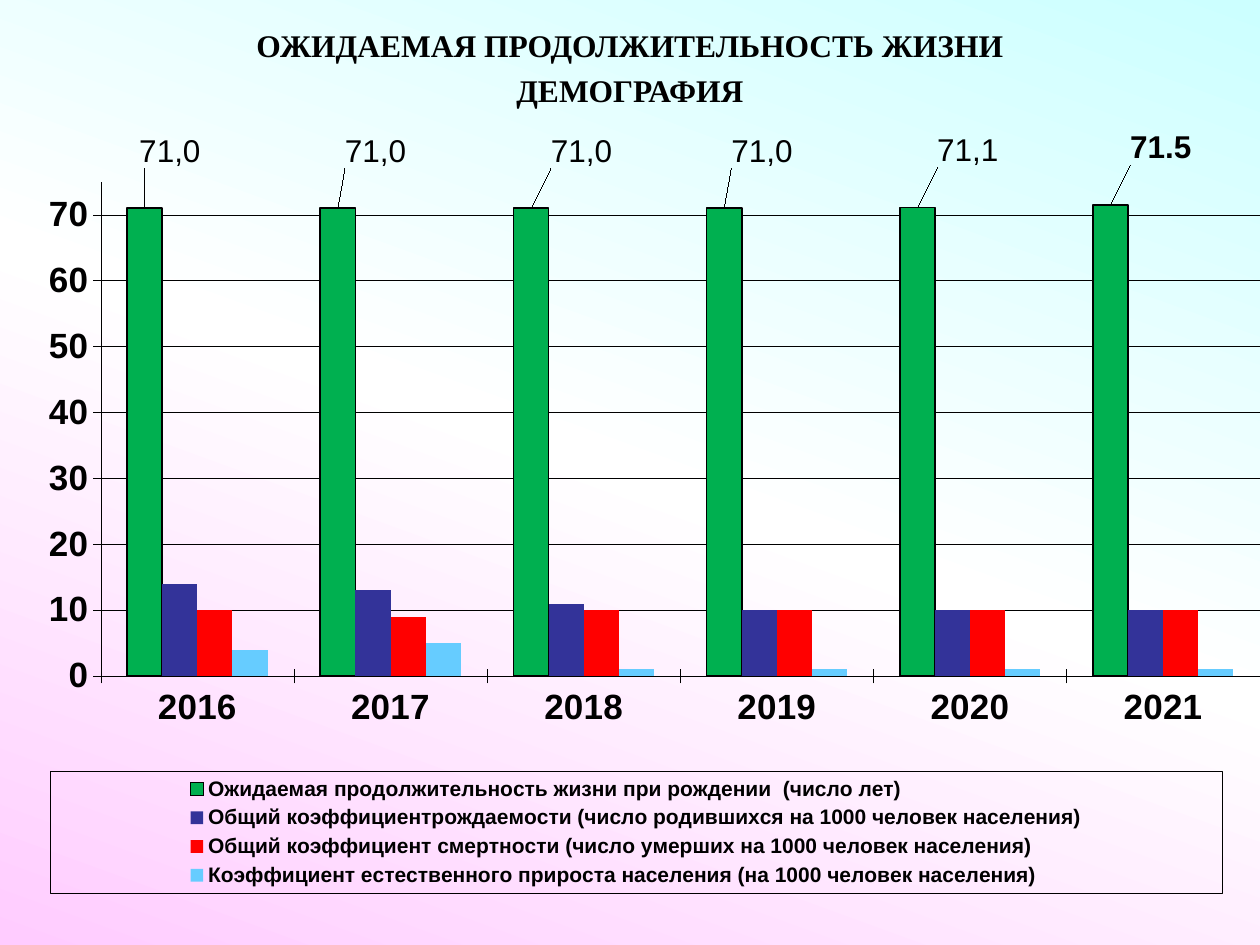
import pptx
import pptx.chart.data
import pptx.dml.color
import pptx.enum.chart
import pptx.enum.text
import pptx.oxml
import pptx.oxml.ns
import pptx.util
from pptx.util import Cm, Pt

TITLE = ["ОЖИДАЕМАЯ ПРОДОЛЖИТЕЛЬНОСТЬ ЖИЗНИ", "ДЕМОГРАФИЯ"]
YEARS = ["2016", "2017", "2018", "2019", "2020", "2021"]
SERIES = [
    ("Ожидаемая продолжительность жизни при рождении  (число лет)",
     [71, 71, 71, 71, 71.1, 71.5], "00B050"),
    ("Общий коэффициентрождаемости (число родившихся на 1000 человек населения)",
     [14, 13, 11, 10, 10, 10], "333399"),
    ("Общий коэффициент смертности (число умерших на 1000 человек населения)",
     [10, 9, 10, 10, 10, 10], "FF0000"),
    ("Коэффициент естественного прироста населения (на 1000 человек населения)",
     [4, 5, 1, 1, 1, 1], "66CCFF"),
]
LABELS = [("71,0", 0.02), ("71,0", 0.03), ("71,0", 0.04),
          ("71,0", 0.03), ("71,1", 0.04), (None, 0.04)]
LABEL_RISE = -0.04
BACKGROUND = [(0, "CCFFFF"), (50, "FFFFFF"), (100, "FFCCFF")]
BACKGROUND_ANGLE = 110
PLOT = (0.08, 0.12, 0.92, 0.57)
LEGEND = (0.04, 0.8, 0.93, 0.14)
BLACK = "000000"


def color(value):
    return pptx.dml.color.RGBColor.from_string(value)


def set_font(font, size, bold=True, name="Arial"):
    font.name, font.size, font.bold = name, Pt(size), bold
    font.color.rgb = color(BLACK)


def set_line(line, width):
    line.color.rgb = color(BLACK)
    line.width = Pt(width)


def layout(x, y, w=None, h=None, inner=False):
    edge = w is not None
    parts = '<c:layoutTarget val="inner"/>' if inner else ""
    if edge:
        parts += '<c:xMode val="edge"/><c:yMode val="edge"/>'
    parts += f'<c:x val="{x}"/><c:y val="{y}"/>'
    if edge:
        parts += f'<c:w val="{w}"/><c:h val="{h}"/>'
    return pptx.oxml.parse_xml(
        f'<c:layout {pptx.oxml.ns.nsdecls("c")}>'
        f'<c:manualLayout>{parts}</c:manualLayout></c:layout>')


def place(parent, new_layout, after=None):
    for old in parent.findall(pptx.oxml.ns.qn("c:layout")):
        parent.remove(old)
    if after is None:
        parent.insert(0, new_layout)
    else:
        parent.find(pptx.oxml.ns.qn(after)).addnext(new_layout)


def paint_background(page):
    stops = "".join(f'<a:gs pos="{pos * 1000}"><a:srgbClr val="{value}"/></a:gs>'
                    for pos, value in BACKGROUND)
    page.element.cSld.insert(0, pptx.oxml.parse_xml(
        f'<p:bg {pptx.oxml.ns.nsdecls("p", "a")}><p:bgPr><a:gradFill rotWithShape="0">'
        f'<a:gsLst>{stops}</a:gsLst><a:lin ang="{BACKGROUND_ANGLE * 60000}" scaled="1"/>'
        '</a:gradFill><a:effectLst/></p:bgPr></p:bg>'))


def add_labels(series):
    for index, (text, shift) in enumerate(LABELS):
        label = series.points[index].data_label
        if text:
            span = label.text_frame.paragraphs[0].add_run()
            span.text = text
            set_font(span.font, 18, bold=False)
        else:
            set_font(label.font, 18)
        label.position = pptx.enum.chart.XL_LABEL_POSITION.OUTSIDE_END
    rows = series.data_labels._element.findall(pptx.oxml.ns.qn("c:dLbl"))
    for row, (text, shift) in zip(rows, LABELS):
        place(row, layout(shift, LABEL_RISE), "c:idx")


def add_chart(page):
    data = pptx.chart.data.CategoryChartData()
    data.categories = YEARS
    for name, values, fill in SERIES:
        data.add_series(name, values)
    chart = page.shapes.add_chart(
        pptx.enum.chart.XL_CHART_TYPE.COLUMN_CLUSTERED,
        Cm(0), Cm(1.57), Cm(25.4), Cm(17.48), data).chart
    chart.has_title = False
    set_font(chart.font, 20)
    plot = chart.plots[0]
    plot.gap_width, plot.overlap, plot.vary_by_categories = 150, 0, False

    for series, (name, values, fill) in zip(plot.series, SERIES):
        series.format.fill.solid()
        series.format.fill.fore_color.rgb = color(fill)
        series.format.line.fill.background()
    set_line(plot.series[0].format.line, 1)
    add_labels(plot.series[0])

    for axis in (chart.category_axis, chart.value_axis):
        axis.major_tick_mark = pptx.enum.chart.XL_TICK_MARK.CROSS
        set_font(axis.tick_labels.font, 20)
        set_line(axis.format.line, 0.25)
    chart.category_axis.tick_label_position = pptx.enum.chart.XL_TICK_LABEL_POSITION.LOW
    scale = chart.value_axis
    scale.minimum_scale, scale.maximum_scale, scale.major_unit = 0, 75, 10
    scale.has_major_gridlines = True
    set_line(scale.major_gridlines.format.line, 0.25)

    chart.has_legend = True
    legend = chart.legend
    legend.position = pptx.enum.chart.XL_LEGEND_POSITION.RIGHT
    legend.include_in_layout = False
    set_font(legend.font, 12)
    place(legend._element, layout(*LEGEND), "c:legendPos")
    legend._element.find(pptx.oxml.ns.qn("c:txPr")).addprevious(pptx.oxml.parse_xml(
        f'<c:spPr {pptx.oxml.ns.nsdecls("c", "a")}><a:noFill/><a:ln w="3175"><a:solidFill>'
        f'<a:srgbClr val="{BLACK}"/></a:solidFill></a:ln></c:spPr>'))
    place(chart._chartSpace.chart.plotArea, layout(*PLOT, inner=True))


def add_title(page):
    box = page.shapes.add_textbox(Cm(0), Cm(0.41), Cm(25.4), Cm(1.4))
    frame = box.text_frame
    frame.word_wrap = True
    for index, line in enumerate(TITLE):
        para = frame.add_paragraph() if index else frame.paragraphs[0]
        para.alignment = pptx.enum.text.PP_ALIGN.CENTER
        para.space_before = Pt(3.6)
        props = para._p.get_or_add_pPr()
        props.set("marL", str(Cm(0.95)))
        props.set("indent", str(-Cm(0.95)))
        span = para.add_run()
        span.text = line
        set_font(span.font, 18, name="Times New Roman")


def main():
    deck = pptx.Presentation()
    deck.slide_width, deck.slide_height = Cm(25.4), Cm(19.05)
    page = deck.slides.add_slide(deck.slide_layouts[6])
    paint_background(page)
    add_chart(page)
    add_title(page)
    deck.save("out.pptx")


if __name__ == "__main__":
    main()
